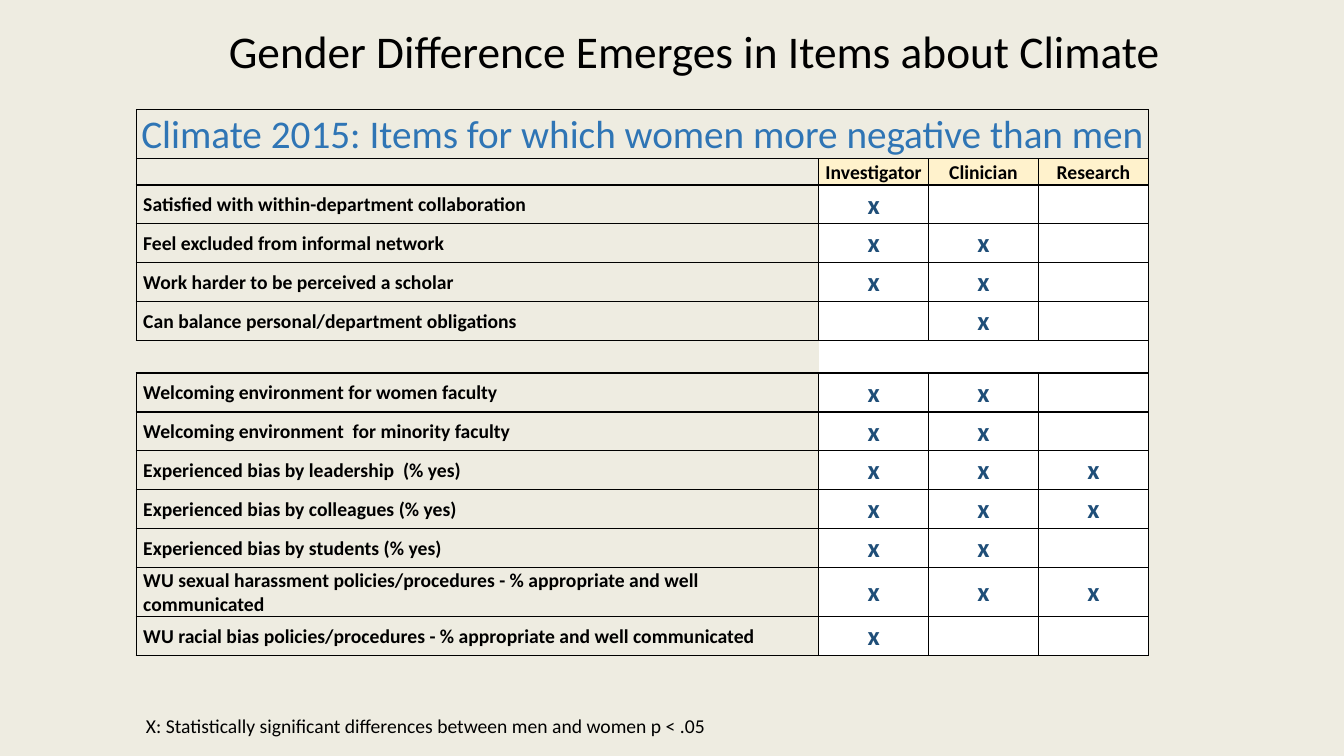
from lxml import etree
from pptx import Presentation
from pptx.dml.color import RGBColor
from pptx.enum.text import MSO_ANCHOR, MSO_AUTO_SIZE, PP_ALIGN
from pptx.oxml.ns import qn
from pptx.util import Cm, Pt

LEFT, CENTER = PP_ALIGN.LEFT, PP_ALIGN.CENTER
MIDDLE, BOTTOM = MSO_ANCHOR.MIDDLE, MSO_ANCHOR.BOTTOM
NO_AUTOFIT = MSO_AUTO_SIZE.NONE
TITLE_ONLY = 5

BLACK, WHITE = "000000", "FFFFFF"
BEIGE, CREAM = "EEECE1", "FFF2CC"
BLUE, NAVY = "2F75B5", "1F4E78"

HEADING = "Climate 2015: Items for which women more negative than men"
GROUPS = ["Investigator", "Clinician", "Research"]
# Each item: wording, then the groups with a significant difference; None is the gap row
ITEMS = [
    ("Satisfied with within-department collaboration", "I"),
    ("Feel excluded from informal network", "IC"),
    ("Work harder to be perceived a scholar", "IC"),
    ("Can balance personal/department obligations", "C"),
    None,
    ("Welcoming environment for women faculty", "IC"),
    ("Welcoming environment  for minority faculty", "IC"),
    ("Experienced bias by leadership  (% yes)", "ICR"),
    ("Experienced bias by colleagues (% yes)", "ICR"),
    ("Experienced bias by students (% yes)", "IC"),
    ("WU sexual harassment policies/procedures - % appropriate and well communicated", "ICR"),
    ("WU racial bias policies/procedures - % appropriate and well communicated", "I"),
]
ITEM_WIDTH, GROUP_WIDTH = 17.2, 2.77
HEADING_HEIGHT, GROUPS_HEIGHT, ITEM_HEIGHT = 1.24, 0.66, 0.98
GAP_HEIGHT, TWO_LINE_HEIGHT = 0.82, 1.22
ONE_LINE_LIMIT = 75


def color(hex_code):
    return RGBColor.from_string(hex_code)


def row_height(item):
    if item is None:
        return GAP_HEIGHT
    return TWO_LINE_HEIGHT if len(item[0]) > ONE_LINE_LIMIT else ITEM_HEIGHT


class SlideBuilder:
    def __init__(self, page, font):
        self.page = page
        self.font = font

    def background(self, hex_code):
        fill = self.page.background.fill
        fill.solid()
        fill.fore_color.rgb = color(hex_code)

    def add_text(self, frame, text, size, hex_code=BLACK, bold=False, align=LEFT):
        para = frame.paragraphs[0]
        para.alignment = align
        span = para.add_run()
        span.text = text
        span.font.name = self.font
        span.font.size = Pt(size)
        span.font.bold = bold
        span.font.color.rgb = color(hex_code)

    def title(self, text, left, top, width, height):
        box = self.page.shapes.title
        box.left, box.top, box.width, box.height = map(Cm, (left, top, width, height))
        frame = box.text_frame
        frame.auto_size = NO_AUTOFIT
        frame.vertical_anchor = MIDDLE
        frame.margin_bottom = Cm(0.64)
        self.add_text(frame, text, 32.4, align=CENTER)

    def note(self, text, left, top, width, height):
        box = self.page.shapes.add_textbox(*map(Cm, (left, top, width, height)))
        box.text_frame.word_wrap = True
        self.add_text(box.text_frame, text, 14)

    def grid(self, left, top, widths, heights):
        frame = self.page.shapes.add_table(
            len(heights), len(widths), Cm(left), Cm(top), Cm(sum(widths)), Cm(sum(heights)))
        table = frame.table
        table.first_row = table.horz_banding = False
        for column, width in zip(table.columns, widths):
            column.width = Cm(width)
        for row, height in zip(table.rows, heights):
            row.height = Cm(height)
        return table

    def cell(self, cell, text="", size=14, hex_code=BLACK, bold=True, align=CENTER,
             anchor=MIDDLE, fill=None, indent=0.03, sides="LRTB", line=1):
        cell.margin_left = Cm(indent)
        cell.margin_right = cell.margin_top = Cm(0.03)
        cell.margin_bottom = 0
        cell.vertical_anchor = anchor
        if fill:
            cell.fill.solid()
            cell.fill.fore_color.rgb = color(fill)
        else:
            cell.fill.background()
        self.borders(cell, sides, line)
        if text:
            self.add_text(cell.text_frame, text, size, hex_code, bold, align)
        else:
            end = etree.SubElement(cell.text_frame.paragraphs[0]._p, qn("a:endParaRPr"))
            end.set("sz", str(size * 100))

    def borders(self, cell, sides, width):
        """Draw the named sides (L, R, T, B) and clear the others."""
        properties = cell._tc.get_or_add_tcPr()
        for position, side in enumerate("LRTB"):
            edge = etree.Element(qn("a:ln" + side), w=str(Pt(width)))
            if side in sides:
                paint = etree.SubElement(edge, qn("a:solidFill"))
                etree.SubElement(paint, qn("a:srgbClr"), val=BLACK)
            else:
                etree.SubElement(edge, qn("a:noFill"))
            properties.insert(position, edge)


def fill_climate_table(slide):
    widths = [ITEM_WIDTH] + [GROUP_WIDTH] * len(GROUPS)
    heights = [HEADING_HEIGHT, GROUPS_HEIGHT] + [row_height(item) for item in ITEMS]
    table = slide.grid(3.43, 2.76, widths, heights)
    last = len(GROUPS)

    table.cell(0, 0).merge(table.cell(0, last))
    slide.cell(table.cell(0, 0), HEADING, 28, BLUE, bold=False, anchor=BOTTOM, line=0.5)
    for column in range(1, last + 1):
        slide.cell(table.cell(0, column), line=0.5)

    slide.cell(table.cell(1, 0))
    for column, group in enumerate(GROUPS, 1):
        slide.cell(table.cell(1, column), group, anchor=BOTTOM, fill=CREAM)

    for row, item in enumerate(ITEMS, 2):
        if item is None:
            table.cell(row, 1).merge(table.cell(row, last))
            slide.cell(table.cell(row, 0), sides="TB")
            for column in range(1, last + 1):
                slide.cell(table.cell(row, column), fill=WHITE, sides="TBR")
            continue
        wording, marked = item
        slide.cell(table.cell(row, 0), wording, align=LEFT, indent=0.18)
        for column, group in enumerate(GROUPS, 1):
            mark = "x" if group[0] in marked else ""
            slide.cell(table.cell(row, column), mark, 19 if mark else 14, NAVY, fill=WHITE)


def main():
    deck = Presentation()
    deck.slide_width, deck.slide_height = Cm(33.87), Cm(19.05)
    page = deck.slides.add_slide(deck.slide_layouts[TITLE_ONLY])
    slide = SlideBuilder(page, "Calibri")
    slide.background(BEIGE)
    slide.title("Gender Difference Emerges in Items about Climate", 2.9, 0.3, 29.2, 2.44)
    fill_climate_table(slide)
    slide.note("X: Statistically significant differences between men and women p < .05",
               3.43, 17.86, 20.45, 0.86)
    deck.save("out.pptx")


if __name__ == "__main__":
    main()
